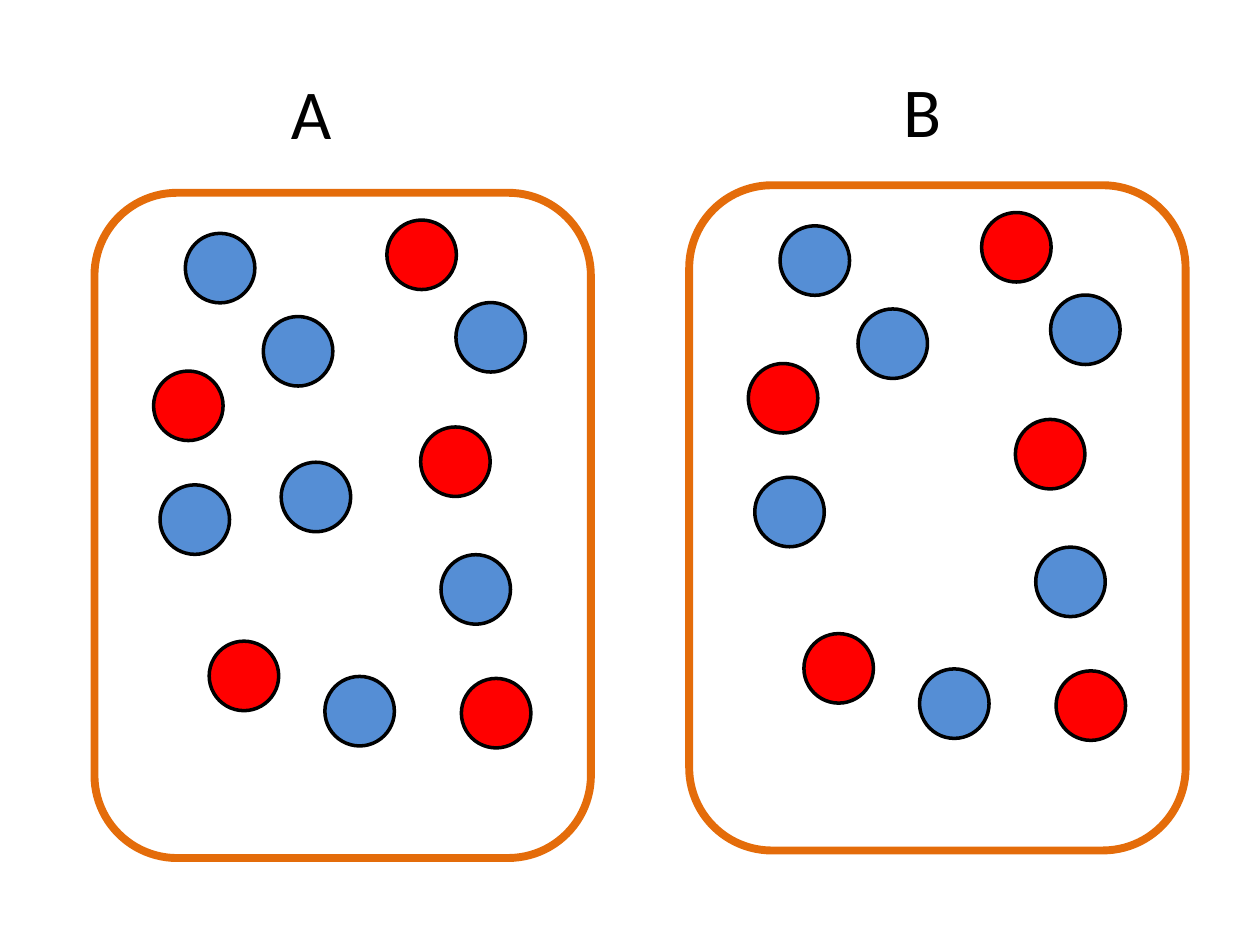
from pptx import Presentation
from pptx.dml.color import RGBColor
from pptx.enum.shapes import MSO_SHAPE as Shape
from pptx.enum.text import MSO_AUTO_SIZE as AutoSize
from pptx.util import Inches, Pt

COLORS = {
    "box": "FFFFFF", "border": "E46C0A",
    "blue": "558ED5", "red": "FF0000", "outline": "000000", "text": "000000",
}
BOX_W, BOX_H = 3.94, 5.28
BALL_SHARE = 0.14  # diameter as a share of the box width

# Left and top of each ball, in percent of the box's width and height
BALLS = {
    "blue": [(34, 18.6), (69.8, 54.4), (18.3, 6.1), (72.8, 16.5),
             (46.4, 72.7), (13.2, 43.9)],
    "red": [(11.9, 26.8), (65.7, 35.2), (23.1, 67.4), (73.9, 73), (58.9, 4.1)],
}
EXTRA_BLUE = (37.6, 40.5)  # the ball that only A holds


def rgb(name):
    return RGBColor.from_string(COLORS[name])


def add_outlined(shapes, kind, box, fill, line, width):
    s = shapes.add_shape(kind, *map(Inches, box))
    s.shadow.inherit = False
    s.fill.solid()
    s.fill.fore_color.rgb = rgb(fill)
    s.line.color.rgb = rgb(line)
    s.line.width = Pt(width)


def add_ball_box(slide, left, top, balls):
    """Group a rounded box with its balls, placed relative to the box."""
    shapes = slide.shapes.add_group_shape().shapes
    add_outlined(shapes, Shape.ROUNDED_RECTANGLE, (left, top, BOX_W, BOX_H),
                 "box", "border", 4.5)
    size = BOX_W * BALL_SHARE
    for color, spots in balls.items():
        for x, y in spots:
            ball = (left + BOX_W * x / 100, top + BOX_H * y / 100, size, size)
            add_outlined(shapes, Shape.OVAL, ball, color, "outline", 2)


def add_label(slide, text, left, top):
    sp = slide.shapes.add_textbox(*map(Inches, (left, top, 0.58, 0.77)))
    tf = sp.text_frame
    tf.word_wrap = True
    tf.auto_size = AutoSize.SHAPE_TO_FIT_TEXT
    r = tf.paragraphs[0].add_run()
    r.text = text
    for name, value in {"name": "Calibri", "size": Pt(40)}.items():
        setattr(r.font, name, value)
    r.font.color.rgb = rgb("text")


def main():
    prs = Presentation()
    prs.slide_width, prs.slide_height = Inches(10), Inches(7.5)
    slide = prs.slides.add_slide(prs.slide_layouts[6])
    add_ball_box(slide, 0.75, 1.53,
                 {**BALLS, "blue": BALLS["blue"] + [EXTRA_BLUE]})
    add_ball_box(slide, 5.47, 1.47, BALLS)
    add_label(slide, "A", 2.21, 0.5)
    add_label(slide, "B", 7.07, 0.49)
    prs.save("out.pptx")


if __name__ == "__main__":
    main()
